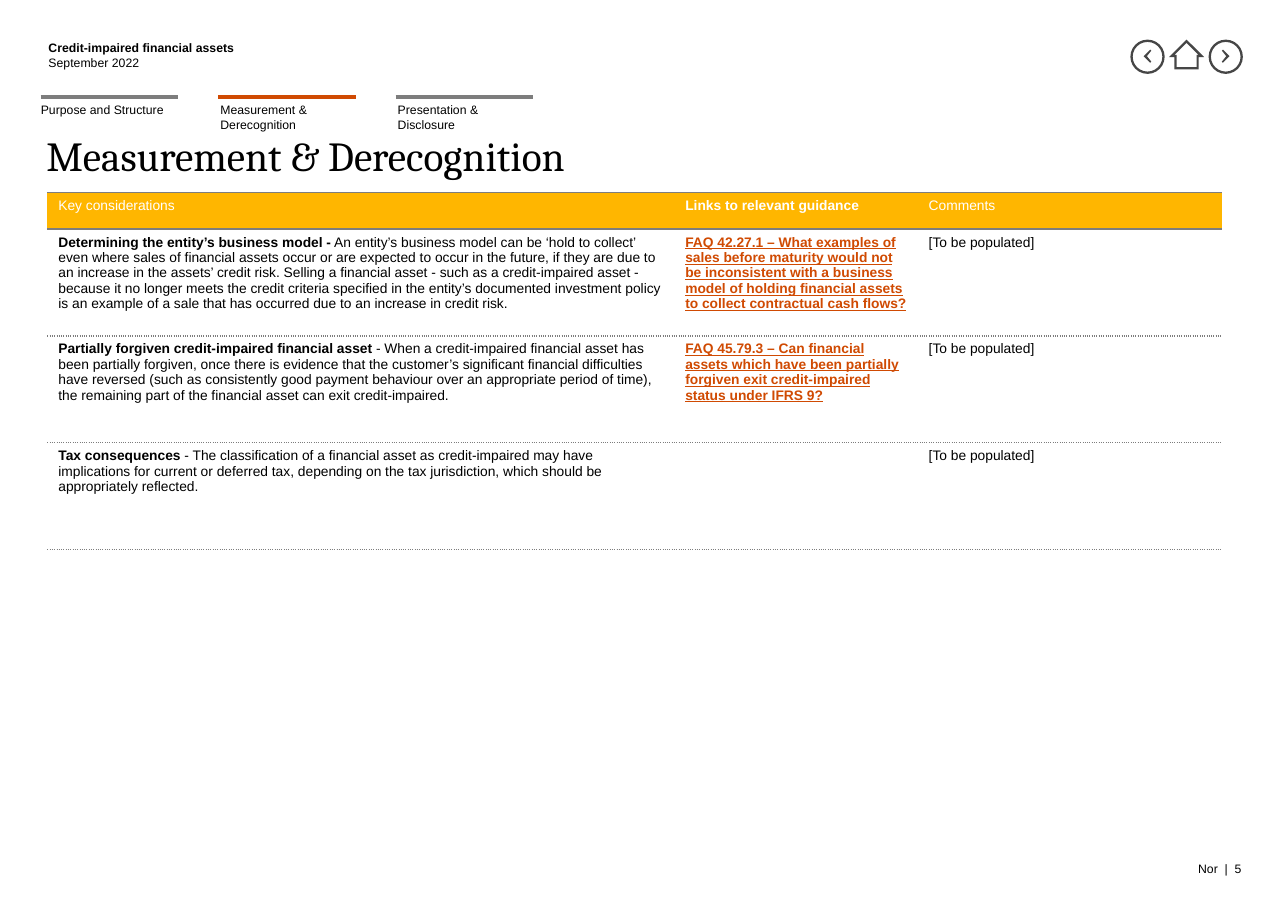
from lxml import etree
from pptx import Presentation
from pptx.dml.color import RGBColor
from pptx.enum.shapes import MSO_CONNECTOR, MSO_SHAPE
from pptx.enum.text import MSO_ANCHOR as ANCHOR, MSO_AUTO_SIZE as AUTO, PP_ALIGN as ALIGN
from pptx.oxml.ns import qn
from pptx.util import Pt

SCALE = 9144  # 100 px to the inch
BLACK, WHITE, GREY, DARK = "000000", "FFFFFF", "7D7D7D", "464646"
ORANGE, AMBER = "D04A02", "FFB600"


def px(n):
    return n * SCALE


def rgb(value):
    return RGBColor.from_string(value)


def add_run(p, text, size=8, color=BLACK, bold=False, underline=False, font="Arial"):
    r = p.add_run()
    r.text = text
    r.font.name, r.font.size = font, Pt(size)
    r.font.bold, r.font.underline = bold, underline
    r.font.color.rgb = rgb(color)


def set_border(cell, side, color=None, dash="solid"):
    """Draw one cell edge, or clear it when no colour is given."""
    ln = etree.SubElement(cell._tc.get_or_add_tcPr(), qn(f"a:ln{side}"), w=str(Pt(1)))
    if color is None:
        etree.SubElement(ln, qn("a:noFill"))
        return
    fill = etree.SubElement(ln, qn("a:solidFill"))
    etree.SubElement(fill, qn("a:srgbClr"), val=color)
    etree.SubElement(ln, qn("a:prstDash"), val=dash)


class SlideBuilder:
    def __init__(self, prs):
        self.s = prs.slides.add_slide(prs.slide_layouts[5])
        self.shapes = self.s.shapes

    def frame(self, tf, anchor=ANCHOR.TOP):
        tf.margin_left = tf.margin_right = tf.margin_top = tf.margin_bottom = 0
        tf.word_wrap, tf.auto_size, tf.vertical_anchor = True, AUTO.NONE, anchor

    def title(self, text, x, y, w, h):
        sp = self.shapes.title
        sp.left, sp.top, sp.width, sp.height = map(px, (x, y, w, h))
        self.frame(sp.text_frame)
        p = sp.text_frame.paragraphs[0]
        p.alignment, p.line_spacing = ALIGN.LEFT, 0.85
        add_run(p, text, size=27, font="Cambria")

    def text(self, lines, x, y, w, h, align=ALIGN.LEFT, anchor=ANCHOR.TOP):
        tf = self.shapes.add_textbox(*map(px, (x, y, w, h))).text_frame
        self.frame(tf, anchor)
        for i, (line, fmt) in enumerate(lines):
            p = tf.add_paragraph() if i else tf.paragraphs[0]
            p.alignment = align
            add_run(p, line, **fmt)

    def rule(self, x, y, w, color):
        c = self.shapes.add_connector(MSO_CONNECTOR.STRAIGHT, px(x), px(y), px(x + w), px(y))
        c.line.color.rgb, c.line.width = rgb(color), Pt(3)
        etree.SubElement(c._element.spPr, qn("a:effectLst"))

    def ring(self, x, y, d, color):
        sp = self.shapes.add_shape(MSO_SHAPE.OVAL, px(x), px(y), px(d), px(d))
        sp.shadow.inherit = False
        sp.fill.background()
        sp.line.color.rgb, sp.line.width = rgb(color), Pt(1.5)

    def outline(self, contours, color):
        fb = self.shapes.build_freeform(*contours[0][0], scale=SCALE)
        for i, points in enumerate(contours):
            if i:
                fb.move_to(*points[0])
            fb.add_line_segments(points[1:], close=True)
        sp = fb.convert_to_shape()
        sp.shadow.inherit = False
        sp.fill.solid()
        sp.fill.fore_color.rgb = rgb(color)
        sp.line.fill.background()

    def table(self, rows, x, y, widths, heights):
        tbl = self.shapes.add_table(len(rows), len(widths), px(x), px(y),
                                    px(sum(widths)), px(sum(heights))).table
        tbl.first_row = tbl.horz_banding = False
        for col, w in zip(tbl.columns, widths):
            col.width = px(w)
        for i, (row, h) in enumerate(zip(rows, heights)):
            tbl.rows[i].height = px(h)
            for j, runs in enumerate(row):
                cell = tbl.cell(i, j)
                set_border(cell, "L")
                set_border(cell, "R")
                set_border(cell, "T", GREY, "dot" if i > 1 else "solid")
                set_border(cell, "B", GREY, "dot" if i else "solid")
                cell.fill.solid()
                cell.fill.fore_color.rgb = rgb(WHITE if i else AMBER)
                for text, fmt in runs:
                    add_run(cell.text_frame.paragraphs[0], text, size=9, **fmt)


PLAIN, BOLD = {}, {"bold": True}
HEAD = {"color": WHITE}
LINK = {"color": ORANGE, "bold": True, "underline": True}
TO_POPULATE = [("[To be populated]", PLAIN)]

ROWS = [
    [[("Key considerations", HEAD)],
     [("Links to relevant guidance", {**HEAD, **BOLD})],
     [("Comments", HEAD)]],
    [[("Determining the entity’s business model -", BOLD),
      (" An entity’s business model can be ‘hold to collect’ even where sales of financial "
       "assets occur or are expected to occur in the future, if they are due to an increase in "
       "the assets’ credit risk. Selling a financial asset - such as a credit-impaired asset - "
       "because it no longer meets the credit criteria specified in the entity’s documented "
       "investment policy is an example of a sale that has occurred due to an increase in "
       "credit risk.", PLAIN)],
     [("FAQ 42.27.1 – What examples of sales before maturity would not be inconsistent with a "
       "business model of holding financial assets to collect contractual cash flows?", LINK)],
     TO_POPULATE],
    [[("Partially forgiven credit-impaired financial asset ", BOLD),
      ("- When a credit-impaired financial asset has been partially forgiven, once there is "
       "evidence that the customer’s significant financial difficulties have reversed (such as "
       "consistently good payment behaviour over an appropriate period of time), the remaining "
       "part of the financial asset can exit credit-impaired.", PLAIN)],
     [("FAQ 45.79.3 – Can financial assets which have been partially forgiven exit "
       "credit-impaired status under IFRS 9?", LINK)],
     TO_POPULATE],
    [[("Tax consequences", BOLD),
      (" - The classification of a financial asset as credit-impaired may have implications for "
       "current or deferred tax, depending on the tax jurisdiction, which should be "
       "appropriately reflected.", PLAIN)],
     [],
     TO_POPULATE],
]

# Tab label, label indent, rule colour
TABS = [("Purpose and Structure", 0, GREY),
        ("Measurement & Derecognition", 2, ORANGE),
        ("Presentation & Disclosure", 2, GREY)]

HOUSE = [[(1077, 36), (1061, 52), (1066, 52), (1066, 63), (1088, 63), (1088, 52), (1093, 52)],
         [(1077, 39), (1088, 50), (1086, 50), (1086, 61), (1068, 61), (1068, 50), (1066, 50)]]
CHEVRON = [(0, 0), (4, 5), (3, 6), (-3, 0), (3, -6), (4, -5)]


def main():
    prs = Presentation()
    prs.slide_width, prs.slide_height = px(1169), px(827)
    b = SlideBuilder(prs)

    # Running header
    b.text([("Credit-impaired financial assets", BOLD), ("September 2022", PLAIN)],
           44, 37, 540, 31)

    # Navigation buttons: back, home, forward
    b.outline(HOUSE, DARK)
    for ring_x, tip_x, way in ((1027, 1041, 1), (1098, 1113, -1)):
        b.ring(ring_x, 37, 29, DARK)
        b.outline([[(tip_x + way * dx, 51 + dy) for dx, dy in CHEVRON]], DARK)

    # Section tabs
    for i, (label, indent, color) in enumerate(TABS):
        x = 37 + 161 * i
        b.rule(x, 88, 125, color)
        b.text([(label, PLAIN)], x + indent, 93, 125, 31)

    # Title and table
    b.title("Measurement & Derecognition", 42, 125, 1086, 62)
    b.table(ROWS, 43, 175, (569, 221, 276), (33, 97, 97, 97))

    # Footer
    b.text([("Nor  |  5", PLAIN)], 932, 779, 195, 16, ALIGN.RIGHT, ANCHOR.BOTTOM)

    prs.save("out.pptx")


if __name__ == "__main__":
    main()
